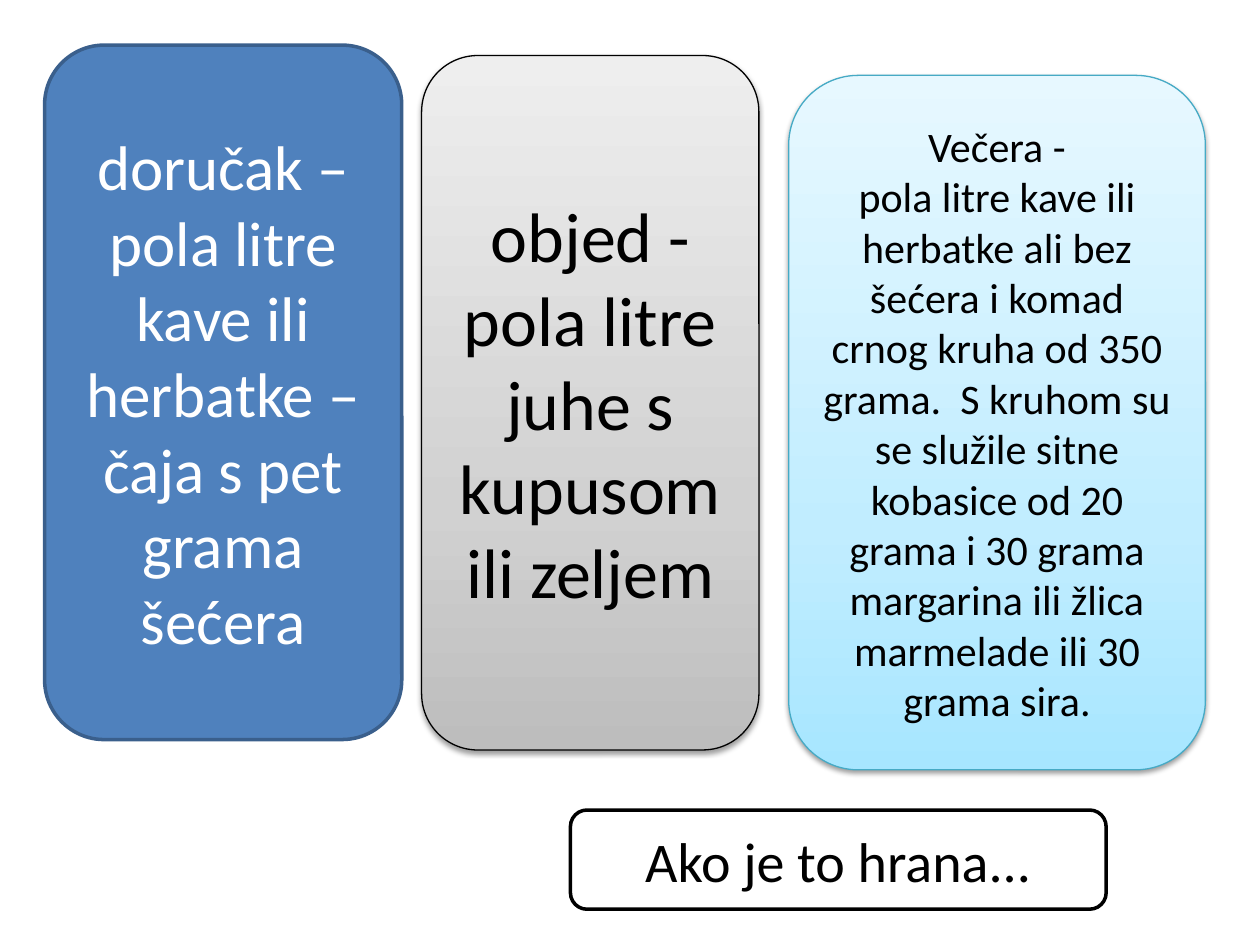
from lxml import etree
from pptx import Presentation
from pptx.dml.color import RGBColor
from pptx.enum.shapes import MSO_SHAPE as Shape
from pptx.enum.text import MSO_ANCHOR as Anchor, PP_ALIGN as Align
from pptx.oxml.ns import qn
from pptx.util import Cm, Pt

BLACK = RGBColor(0x00, 0x00, 0x00)
WHITE = RGBColor(0xFF, 0xFF, 0xFF)
BLUE = RGBColor(0x4F, 0x81, 0xBD)
DARK_BLUE = RGBColor(0x3A, 0x5F, 0x8C)
TEAL = RGBColor(0x46, 0xAA, 0xC5)
GREYS = [RGBColor(0xBD, 0xBD, 0xBD), RGBColor(0xD1, 0xD1, 0xD1), RGBColor(0xEE, 0xEE, 0xEE)]
SKIES = [RGBColor(0xA7, 0xE6, 0xFF), RGBColor(0xC1, 0xED, 0xFF), RGBColor(0xE7, 0xF8, 0xFF)]


class MenuSlide:
    font_name = "Calibri"
    stops = (0, 35, 100)

    def __init__(self, prs):
        self.s = prs.slides.add_slide(prs.slide_layouts[6])

    def card(self, box, paragraphs, size, fill, line, width, color=BLACK):
        """Rounded card with centred text and a solid fill."""
        sp = self.s.shapes.add_shape(Shape.ROUNDED_RECTANGLE, *map(Cm, box))
        sp.shadow.inherit = False
        sp.fill.solid()
        sp.fill.fore_color.rgb = fill
        sp.line.color.rgb = line
        sp.line.width = Pt(width)
        tf = sp.text_frame
        tf.word_wrap = True
        tf.vertical_anchor = Anchor.MIDDLE
        for i, text in enumerate(paragraphs):
            p = tf.paragraphs[0] if i == 0 else tf.add_paragraph()
            p.alignment = Align.CENTER
            r = p.add_run()
            r.text = text
            for name, value in {"name": self.font_name, "size": Pt(size)}.items():
                setattr(r.font, name, value)
            r.font.color.rgb = color
        return sp

    def raised_card(self, box, paragraphs, size, colors, line):
        """Card with a vertical gradient and a soft shadow below."""
        sp = self.card(box, paragraphs, size, colors[0], line, 0.75)
        self.gradient(sp, colors)
        self.shadow(sp)

    def gradient(self, sp, colors):
        sp.fill.gradient()
        sp.fill.gradient_angle = 90
        stop_list = sp._element.spPr.find(".//" + qn("a:gsLst"))
        for old in list(stop_list):
            stop_list.remove(old)
        for pos, color in zip(self.stops, colors):
            gs = etree.SubElement(stop_list, qn("a:gs"), pos=str(pos * 1000))
            etree.SubElement(gs, qn("a:srgbClr"), val=str(color))

    def shadow(self, sp):
        effects = sp._element.spPr.find(qn("a:effectLst"))
        outer = etree.SubElement(
            effects, qn("a:outerShdw"), blurRad=str(Pt(3.1)), dist=str(Pt(1.6)),
            dir="5400000", rotWithShape="0")
        clr = etree.SubElement(outer, qn("a:srgbClr"), val=str(BLACK))
        etree.SubElement(clr, qn("a:alpha"), val="38000")


def main():
    prs = Presentation()
    prs.slide_width, prs.slide_height = Cm(25.4), Cm(19.05)
    menu = MenuSlide(prs)
    card_height = 14

    # Closing remark
    menu.card((11.5, 16.33, 10.8, 2), ["Ako je to hrana..."], 32, WHITE, BLACK, 2)

    # Breakfast
    menu.card((0.9, 0.91, 7.2, card_height),
              ["doručak –", "pola litre kave ili herbatke – čaja s pet grama šećera"],
              36, BLUE, DARK_BLUE, 2, WHITE)

    # Lunch
    menu.raised_card((8.5, 1.12, 6.8, card_height),
                     ["objed - pola litre juhe s kupusom ili zeljem"], 40, GREYS, BLACK)

    # Dinner
    menu.raised_card((15.9, 1.52, 8.4, card_height),
                     ["Večera -",
                      "pola litre kave ili herbatke ali bez šećera i komad crnog kruha "
                      "od 350 grama.  S kruhom su se služile sitne kobasice od 20 grama "
                      "i 30 grama margarina ili žlica marmelade ili 30 grama sira."],
                     24, SKIES, TEAL)

    prs.save("out.pptx")


if __name__ == "__main__":
    main()
